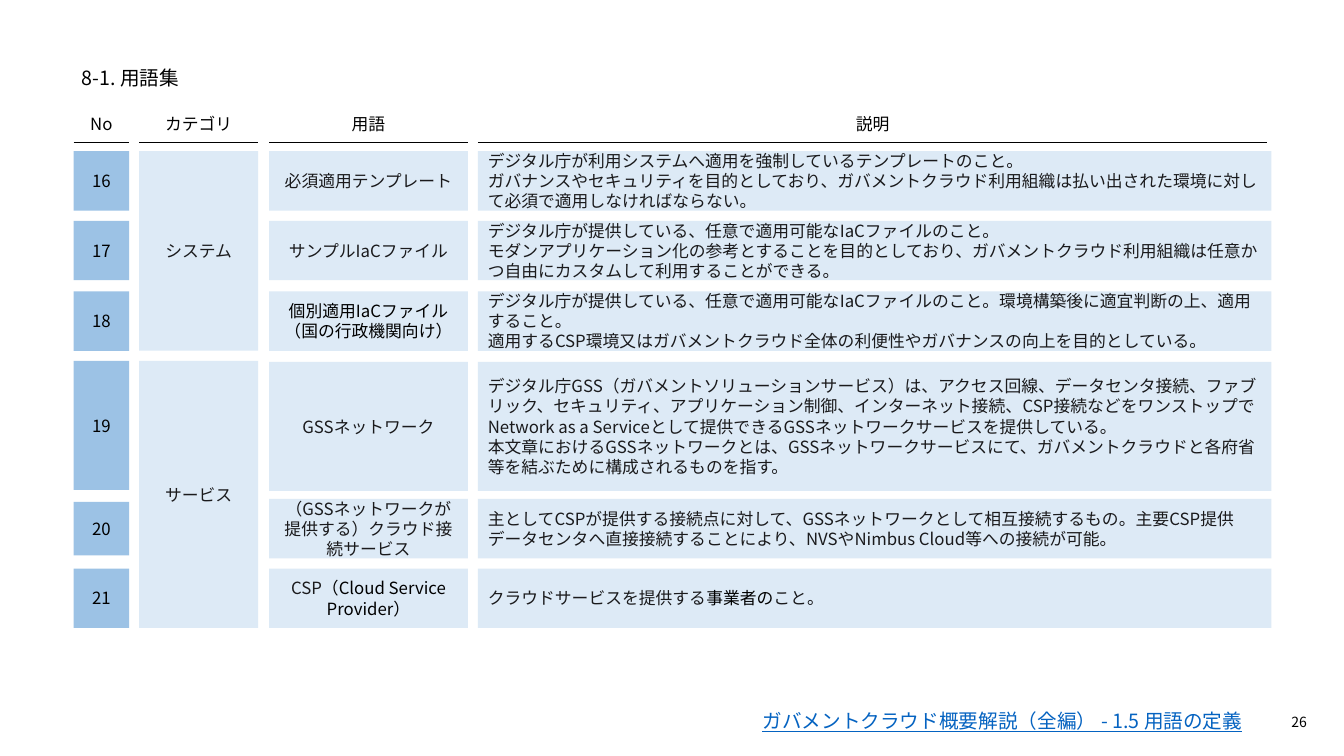
from dataclasses import dataclass

import lxml.etree
import pptx
import pptx.dml.color
import pptx.enum.lang
import pptx.enum.shapes
import pptx.enum.text
import pptx.oxml.ns
import pptx.util

PX = 9144
FONT = "Noto Sans CJK JP"
COLORS = {
    "black": "000000",
    "ink": "1A1A1C",
    "number": "9CC2E5",
    "cell": "DDEAF6",
    "link": "0563C1",
}
ALIGN = pptx.enum.text.PP_ALIGN
ANCHOR = pptx.enum.text.MSO_ANCHOR


@dataclass(frozen=True)
class Box:
    left: int
    top: int
    width: int
    height: int

    def emu(self) -> tuple[int, ...]:
        return tuple(v * PX for v in (self.left, self.top, self.width, self.height))


@dataclass(frozen=True)
class Run:
    text: str
    color: str = "ink"


Paragraphs = list[list[Run]]


@dataclass(frozen=True)
class Column:
    heading: str
    left: int
    width: int
    rule: int


@dataclass(frozen=True)
class Term:
    number: Box
    top: int
    height: int
    name: Paragraphs
    description: Paragraphs


@dataclass(frozen=True)
class Category:
    name: str
    top: int
    height: int


def lines(*texts: str, color: str = "ink") -> Paragraphs:
    return [[Run(text, color)] for text in texts]


NO = Column("No", 73, 55, 55)
CATEGORY = Column("カテゴリ", 138, 118, 118)
NAME = Column("用語", 267, 197, 197)
DESCRIPTION = Column("説明", 474, 787, 783)

CATEGORIES = [Category("システム", 150, 198), Category("サービス", 358, 265)]

FIRST_NUMBER = 16
TERMS = [
    Term(Box(73, 150, 55, 59), 150, 59, lines("必須適用テンプレート"), lines(
        "デジタル庁が利用システムへ適用を強制しているテンプレートのこと。",
        "ガバナンスやセキュリティを目的としており、ガバメントクラウド利用組織は"
        "払い出された環境に対して必須で適用しなければならない。")),
    Term(Box(73, 219, 55, 59), 219, 59, lines("サンプルIaCファイル"), lines(
        "デジタル庁が提供している、任意で適用可能なIaCファイルのこと。",
        "モダンアプリケーション化の参考とすることを目的としており、"
        "ガバメントクラウド利用組織は任意かつ自由にカスタムして利用することができる。")),
    Term(Box(73, 289, 55, 59), 289, 59,
         lines("個別適用IaCファイル", "（国の行政機関向け）", color="black"), lines(
        "デジタル庁が提供している、任意で適用可能なIaCファイルのこと。"
        "環境構築後に適宜判断の上、適用すること。",
        "適用するCSP環境又はガバメントクラウド全体の利便性やガバナンスの向上を目的としている。")),
    Term(Box(73, 358, 55, 128), 359, 128, lines("GSSネットワーク"), lines(
        "デジタル庁GSS（ガバメントソリューションサービス）は、アクセス回線、"
        "データセンタ接続、ファブリック、セキュリティ、アプリケーション制御、"
        "インターネット接続、CSP接続などをワンストップで Network as a Serviceとして"
        "提供できるGSSネットワークサービスを提供している。",
        "本文章におけるGSSネットワークとは、GSSネットワークサービスにて、"
        "ガバメントクラウドと各府省等を結ぶために構成されるものを指す。")),
    Term(Box(73, 498, 55, 53), 495, 59,
         lines("（GSSネットワークが提供する）クラウド接続サービス"), lines(
        "主としてCSPが提供する接続点に対して、GSSネットワークとして相互接続するもの。"
        "主要CSP提供データセンタへ直接接続することにより、"
        "NVSやNimbus Cloud等への接続が可能。")),
    Term(Box(73, 564, 55, 59), 564, 59,
         [[Run("CSP"), Run("（Cloud Service Provider）", "black")]],
         [[Run("クラウドサービスを提供する"), Run("事業者の", "black"), Run("こと。")]]),
]


def rgb(name: str) -> pptx.dml.color.RGBColor:
    return pptx.dml.color.RGBColor.from_string(COLORS[name])


def write(sp, paragraphs: Paragraphs, size: int = 12, align=ALIGN.CENTER,
          anchor=ANCHOR.MIDDLE, insets: tuple[int, ...] = (10, 5, 10, 5),
          underline: bool | None = None) -> None:
    tf = sp.text_frame
    tf.word_wrap = True
    tf.vertical_anchor = anchor
    tf.margin_left, tf.margin_top, tf.margin_right, tf.margin_bottom = (
        v * PX for v in insets)
    for i, runs in enumerate(paragraphs):
        p = tf.add_paragraph() if i else tf.paragraphs[0]
        p.alignment = align
        for run in runs:
            r = p.add_run()
            r.text = run.text
            r.font.size = pptx.util.Pt(size)
            r.font.color.rgb = rgb(run.color)
            r.font.underline = underline
            r.font.language_id = pptx.enum.lang.MSO_LANGUAGE_ID.JAPANESE
            r.font.name = FONT
            latin = r.font._element.find(pptx.oxml.ns.qn("a:latin"))
            ea = lxml.etree.Element(pptx.oxml.ns.qn("a:ea"), typeface=FONT)
            latin.addnext(ea)


def add_cell(slide, box: Box, paragraphs: Paragraphs, fill: str = "cell",
             align=ALIGN.CENTER) -> None:
    sp = slide.shapes.add_shape(pptx.enum.shapes.MSO_SHAPE.RECTANGLE, *box.emu())
    sp.shadow.inherit = False
    sp.fill.solid()
    sp.fill.fore_color.rgb = rgb(fill)
    sp.line.fill.background()
    write(sp, paragraphs, align=align)


def add_heading(slide, column: Column) -> None:
    box = Box(column.left, 108, column.rule, 30)
    sp = slide.shapes.add_textbox(*box.emu())
    write(sp, lines(column.heading, color="black"), anchor=ANCHOR.TOP)
    sp.text_frame.auto_size = pptx.enum.text.MSO_AUTO_SIZE.SHAPE_TO_FIT_TEXT
    rule = slide.shapes.add_connector(
        pptx.enum.shapes.MSO_CONNECTOR.STRAIGHT, column.left * PX, 141 * PX,
        (column.left + column.rule) * PX, 141 * PX)
    rule.line.color.rgb = rgb("black")
    rule.line.width = pptx.util.Pt(0.75)
    lxml.etree.SubElement(rule._element.spPr, pptx.oxml.ns.qn("a:effectLst"))


def add_term(slide, number: int, term: Term) -> None:
    add_cell(slide, term.number, lines(str(number), color="black"), "number")
    add_cell(slide, Box(NAME.left, term.top, NAME.width, term.height), term.name)
    add_cell(slide, Box(DESCRIPTION.left, term.top, DESCRIPTION.width, term.height),
             term.description, align=ALIGN.LEFT)


def add_footer(slide) -> None:
    sp = slide.shapes.add_textbox(*Box(81, 696, 1161, 40).emu())
    write(sp, lines("ガバメントクラウド概要解説（全編） - 1.5 用語の定義", color="link"),
          14, ALIGN.RIGHT, insets=(0, 5, 10, 5), underline=True)
    p = sp.text_frame.paragraphs[0]
    p.line_spacing = 0.9
    p.space_before = pptx.util.Pt(10)
    sp = slide.shapes.add_textbox(*Box(1247, 696, 49, 40).emu())
    write(sp, lines("26", color="black"), 10, ALIGN.RIGHT, insets=(10, 5, 0, 5))


def main() -> None:
    prs = pptx.Presentation()
    prs.slide_width, prs.slide_height = 1333 * PX, 750 * PX
    slide = prs.slides.add_slide(prs.slide_layouts[5])
    title = slide.shapes.title
    title.left, title.top, title.width, title.height = Box(81, 60, 1172, 34).emu()
    write(title, lines("8-1. 用語集", color="black"), 14, ALIGN.LEFT,
          insets=(0, 0, 0, 0))
    for column in (NO, CATEGORY, NAME, DESCRIPTION):
        add_heading(slide, column)
    for category in CATEGORIES:
        box = Box(CATEGORY.left, category.top, CATEGORY.width, category.height)
        add_cell(slide, box, lines(category.name))
    for number, term in enumerate(TERMS, FIRST_NUMBER):
        add_term(slide, number, term)
    add_footer(slide)
    prs.save("out.pptx")


if __name__ == "__main__":
    main()
